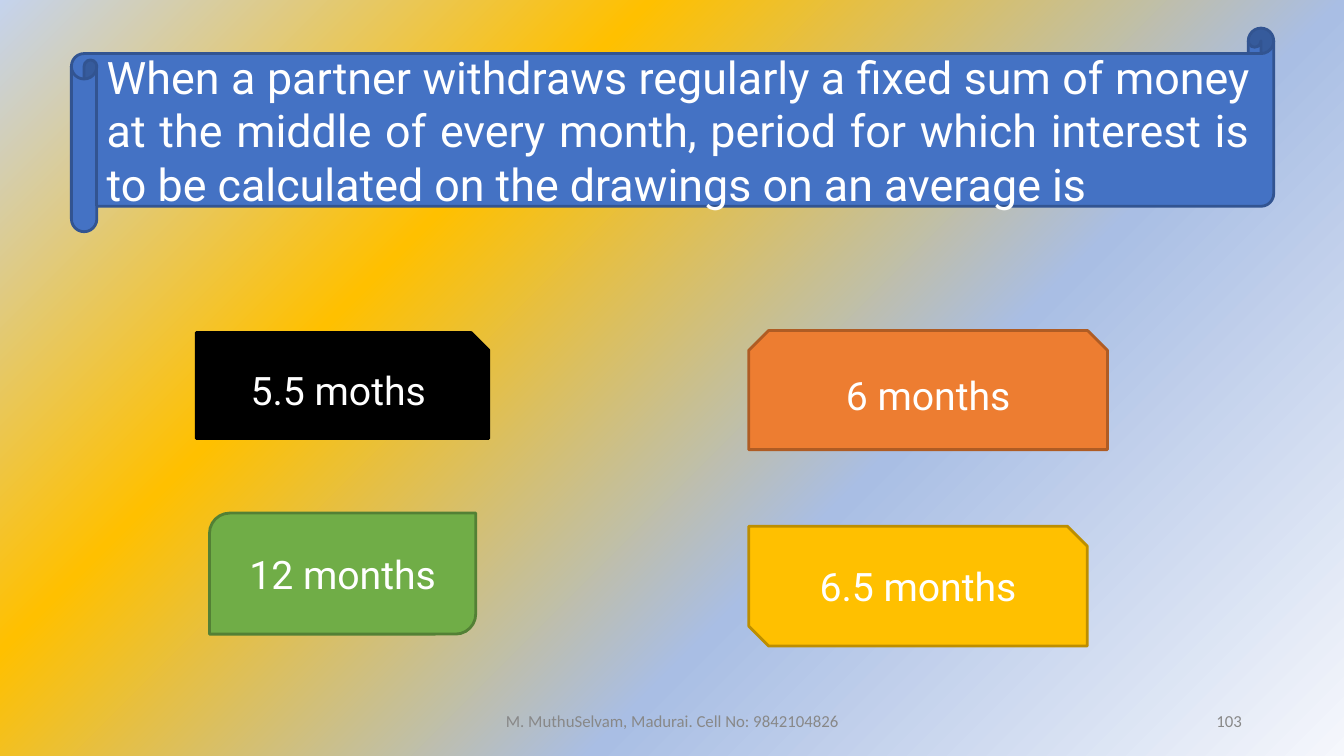
from dataclasses import dataclass

from lxml.etree import SubElement
from pptx import Presentation
from pptx.dml.color import RGBColor
from pptx.enum.shapes import MSO_SHAPE
from pptx.enum.text import MSO_ANCHOR, PP_ALIGN
from pptx.oxml.ns import qn
from pptx.util import Cm, Pt


@dataclass(frozen=True)
class Theme:
    """Colours, fonts and type sizes of the slide."""
    blue: tuple = ("4472C4", "325491")
    black: tuple = ("000000", "000000")
    orange: tuple = ("ED7D31", "AF5C24")
    gold: tuple = ("FFC000", "BD8E00")
    green: tuple = ("70AD47", "538035")
    white: str = "FFFFFF"
    grey: str = "888888"
    glow: tuple = ((0, "F5F7FC"), (36, "A9BEE4"), (69, "FFC000"), (100, "C5D3ED"))
    body: str = "Roboto"
    small: str = "Calibri"
    ask: int = 32
    answer: int = 28
    note: int = 12
    edge: int = 2


class Quiz:
    """Draws the parts of a quiz slide in one theme."""

    def __init__(self, slide, theme):
        self.slide, self.theme = slide, theme

    def backdrop(self):
        """Fill the background with a glow from the lower right corner."""
        self.slide.background.fill.gradient()
        grad = self.slide.element.find(".//" + qn("a:gradFill"))
        for child in list(grad):
            grad.remove(child)
        stops = SubElement(grad, qn("a:gsLst"))
        for place, colour in self.theme.glow:
            stop = SubElement(stops, qn("a:gs"), pos=str(place * 1000))
            SubElement(stop, qn("a:srgbClr"), val=colour)
        sweep = SubElement(grad, qn("a:path"), {"path": "circle"})
        SubElement(sweep, qn("a:fillToRect"), l="100000", t="100000")

    def label(self, shape, text, align, size, font, colour):
        """Put one styled paragraph into a shape."""
        frame = shape.text_frame
        frame.word_wrap = True
        frame.vertical_anchor = MSO_ANCHOR.MIDDLE
        para = frame.paragraphs[0]
        para.alignment = align
        run = para.add_run()
        run.text = text
        for name, value in {"size": Pt(size), "name": font}.items():
            setattr(run.font, name, value)
        run.font.color.rgb = RGBColor.from_string(colour)

    def panel(self, kind, box, paint, text, size, align=PP_ALIGN.CENTER):
        """Add a filled shape with white text."""
        shape = self.slide.shapes.add_shape(kind, *map(Cm, box))
        shape.shadow.inherit = False
        fill, line = map(RGBColor.from_string, paint)
        shape.fill.solid()
        shape.fill.fore_color.rgb = fill
        shape.line.color.rgb = line
        shape.line.width = Pt(self.theme.edge)
        self.label(shape, text, align, size, self.theme.body, self.theme.white)

    def note(self, left, width, text, align):
        """Add a small grey text in the footer row."""
        box = self.slide.shapes.add_textbox(*map(Cm, (left, 17.65, width, 1.02)))
        look = self.theme
        self.label(box, text, align, look.note, look.small, look.grey)


def main():
    """Build the quiz slide and save it."""
    deck = Presentation()
    for name, value in {"slide_width": 33.87, "slide_height": 19.05}.items():
        setattr(deck, name, Cm(value))
    look = Theme()
    quiz = Quiz(deck.slides.add_slide(deck.slide_layouts[6]), look)
    quiz.backdrop()
    quiz.panel(
        MSO_SHAPE.HORIZONTAL_SCROLL, (1.8, 0.71, 30.3, 5.13), look.blue,
        "When a partner withdraws regularly a fixed sum of money at the middle "
        "of every month, period for which interest is to be calculated on the "
        "drawings on an average is", look.ask, PP_ALIGN.JUSTIFY)
    answers = (
        (MSO_SHAPE.SNIP_1_RECTANGLE, (4.95, 8.38, 7.37, 2.67), look.black, "5.5 moths"),
        (MSO_SHAPE.SNIP_2_SAME_RECTANGLE, (18.87, 8.33, 9.04, 3), look.orange, "6 months"),
        (MSO_SHAPE.SNIP_2_DIAG_RECTANGLE, (18.87, 13.26, 8.53, 3.02), look.gold, "6.5 months"),
        (MSO_SHAPE.ROUND_2_DIAG_RECTANGLE, (5.28, 12.93, 6.71, 3.05), look.green, "12 months"),
    )
    for answer in answers:
        quiz.panel(*answer, look.answer)
    quiz.note(11.23, 11.43, "M. MuthuSelvam, Madurai. Cell No: 9842104826", PP_ALIGN.CENTER)
    quiz.note(23.93, 7.62, "103", PP_ALIGN.RIGHT)
    deck.save("out.pptx")


if __name__ == "__main__":
    main()
